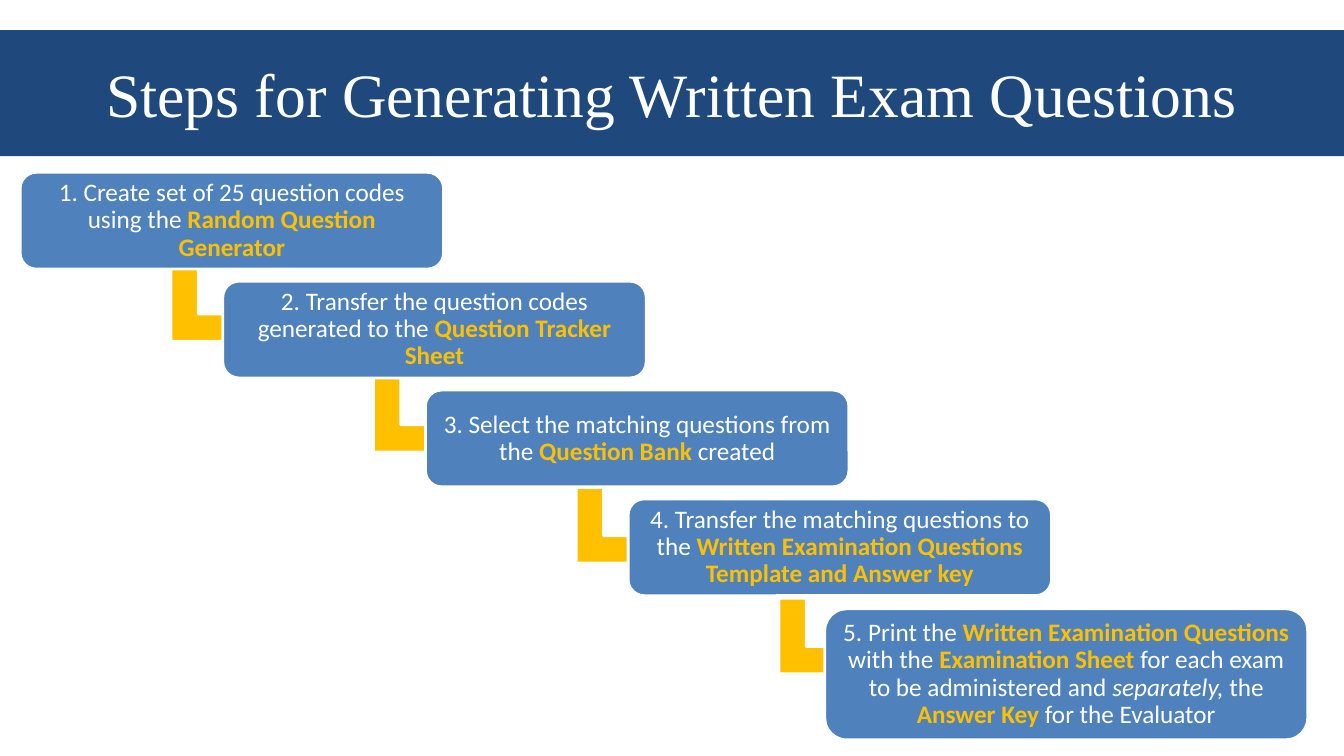
from pptx import Presentation
from pptx.dml.color import RGBColor
from pptx.enum.shapes import MSO_SHAPE as Kind
from pptx.enum.text import MSO_ANCHOR as Anchor, PP_ALIGN as Align
from pptx.util import Inches, Pt

WHITE, GOLD, BLUE, NAVY = "FFFFFF", "FFC000", "4F81BD", "1F497D"
STYLES = {
    "plain": (WHITE, {"bold": False, "italic": False}),
    "key": (GOLD, {"bold": True, "italic": False}),
    "slant": (WHITE, {"bold": False, "italic": True}),
}
TITLE = [("Steps for Generating Written Exam Questions", "plain")]
STEPS = [
    [("1. Create set of 25 question codes using the ", "plain"),
     ("Random Question Generator", "key")],
    [("2. Transfer the question codes generated to the ", "plain"),
     ("Question Tracker Sheet", "key")],
    [("3. Select the matching questions from the ", "plain"),
     ("Question Bank ", "key"), ("created", "plain")],
    [("4. Transfer the matching questions to the ", "plain"),
     ("Written Examination Questions Template and Answer key", "key")],
    [("5. Print the ", "plain"), ("Written Examination Questions ", "key"),
     ("with the ", "plain"), ("Examination Sheet ", "key"),
     ("for each exam to be administered and ", "plain"),
     ("separately, ", "slant"), ("the ", "plain"),
     ("Answer Key ", "key"), ("for the Evaluator", "plain")],
]

deck = Presentation()
deck.slide_width, deck.slide_height = Inches(13.33), Inches(7.5)
slide = deck.slides.add_slide(deck.slide_layouts[6])


def add_form(kind, box, fill, edge=True):
    form = slide.shapes.add_shape(kind, *[Inches(v) for v in box])
    form.shadow.inherit = False
    form.fill.solid()
    form.fill.fore_color.rgb = RGBColor.from_string(fill)
    if edge:
        form.line.color.rgb = RGBColor.from_string(WHITE)
        form.line.width = Pt(2)
    else:
        form.line.fill.background()
    return form


def add_text(form, parts, face, size, gap):
    frame = form.text_frame
    pad = Inches(0.07)
    setup = {"word_wrap": True, "vertical_anchor": Anchor.MIDDLE,
             "margin_left": pad, "margin_right": pad,
             "margin_top": pad, "margin_bottom": pad}
    for name, value in setup.items():
        setattr(frame, name, value)
    para = frame.paragraphs[0]
    para.alignment, para.line_spacing = Align.CENTER, gap
    for text, style in parts:
        run = para.add_run()
        run.text = text
        color, look = STYLES[style]
        run.font.color.rgb = RGBColor.from_string(color)
        for name, value in {"name": face, "size": Pt(size), **look}.items():
            setattr(run.font, name, value)


banner = add_form(Kind.RECTANGLE, (0, 0.3, 13.33, 1.25), NAVY, edge=False)
add_text(banner, TITLE, "Times New Roman", 44, 1.0)

last = len(STEPS) - 1
for i, parts in enumerate(STEPS):
    left, top = 0.2 + 2.01 * i, 1.71 + 1.08 * i
    if i < last:
        arrow = add_form(Kind.BENT_UP_ARROW,
                         (left + 1.55, 2.58 + 1.1 * i, 0.82, 0.93), GOLD)
        arrow.rotation = 90
        for n, value in enumerate((0.33, 0.25, 0.36)):
            arrow.adjustments[n] = value
        box = (left, top, 4.2, 0.96)
    else:
        box = (8.18, 6.04, 4.79, 1.3)
    step = add_form(Kind.ROUNDED_RECTANGLE, box, BLUE)
    add_text(step, parts, "Calibri", 18, 0.9)

deck.save("out.pptx")
